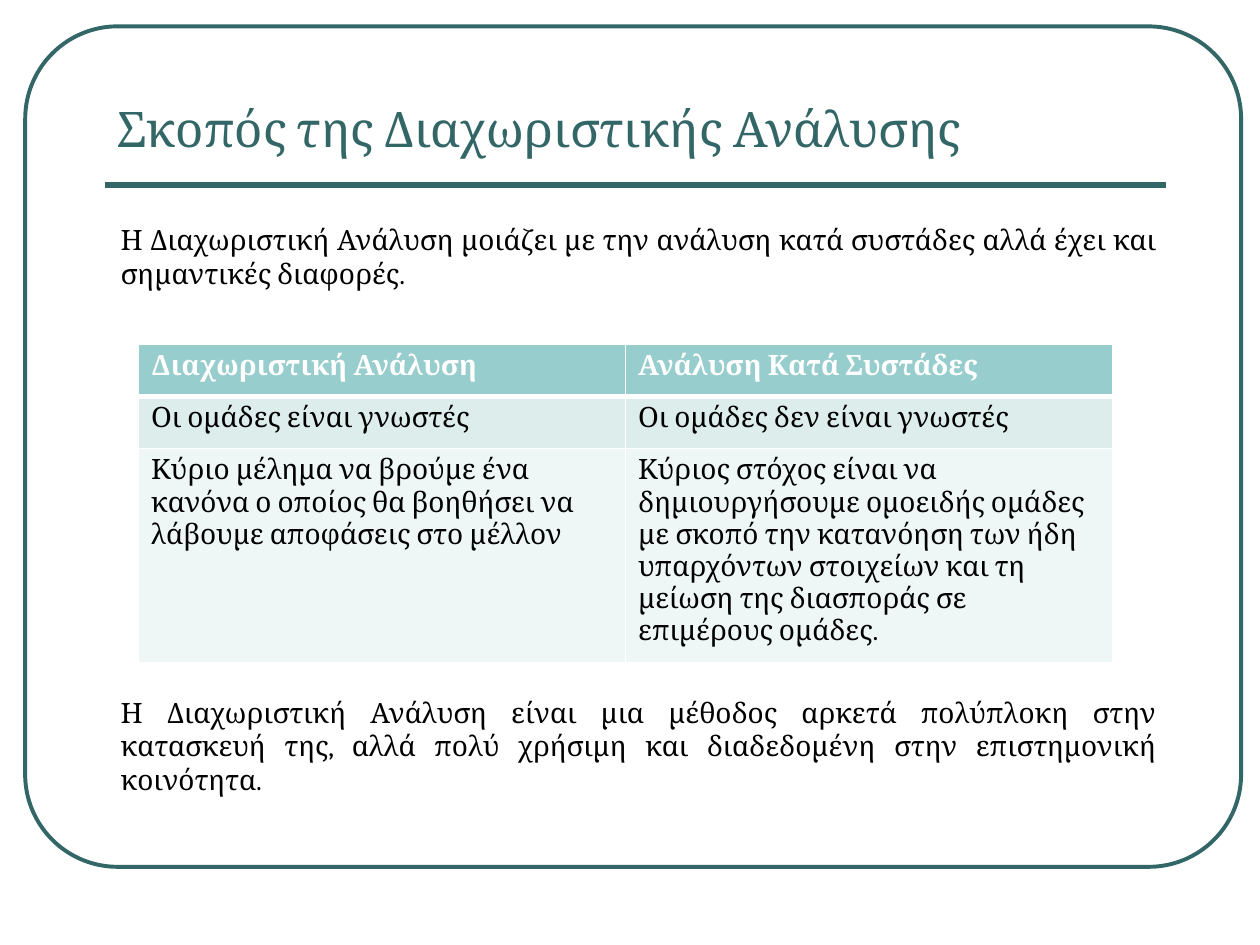
from lxml import etree
from pptx import Presentation, util as u
from pptx.dml.color import RGBColor
from pptx.enum import shapes, text
from pptx.oxml import ns

W, H = u.Inches(10), u.Inches(7.5)
FONT = "Cambria"
COLORS = {"teal": "336666", "ink": "000000", "white": "FFFFFF",
          "header": "97CDCC", "band": "DDEDEC", "pale": "EFF6F6"}
ROWS = [
    ("Διαχωριστική Ανάλυση", "Ανάλυση Κατά Συστάδες"),
    ("Οι ομάδες είναι γνωστές", "Οι ομάδες δεν είναι γνωστές"),
    ("Κύριο μέλημα να βρούμε ένα κανόνα ο οποίος θα βοηθήσει να λάβουμε "
     "αποφάσεις στο μέλλον",
     "Κύριος στόχος είναι να δημιουργήσουμε ομοειδής ομάδες με σκοπό την "
     "κατανόηση των ήδη υπαρχόντων στοιχείων και τη μείωση της διασποράς σε "
     "επιμέρους ομάδες."),
]
ROW_SHARES = (0.17, 0.17, 0.66)
INTRO = ("Η Διαχωριστική Ανάλυση μοιάζει με την ανάλυση κατά συστάδες αλλά "
         "έχει και σημαντικές διαφορές.")
CLOSING = ("Η Διαχωριστική Ανάλυση είναι μια μέθοδος αρκετά πολύπλοκη στην "
           "κατασκευή της, αλλά πολύ χρήσιμη και διαδεδομένη στην "
           "επιστημονική κοινότητα.")


def rgb(name):
    """Return the named colour."""
    return RGBColor.from_string(COLORS[name])


def box(left, top, width, height):
    """Turn inches on the slide into a left, top, width, height box."""
    return tuple(u.Inches(v) for v in (left, top, width, height))


def write(tf, content, size, color, bold=False, align=text.PP_ALIGN.LEFT):
    """Fill a text frame with one formatted paragraph."""
    tf.text = content
    p = tf.paragraphs[0]
    p.alignment = align
    font = p.runs[0].font
    font.name, font.size, font.bold = FONT, u.Pt(size), bold
    font.color.rgb = rgb(color)


def add_frame(s, area):
    """Draw the rounded outline around the slide."""
    sp = s.shapes.add_shape(shapes.MSO_SHAPE.ROUNDED_RECTANGLE, *area)
    sp.adjustments[0] = 0.11
    sp.shadow.inherit = False
    sp.fill.background()
    sp.line.color.rgb = rgb("teal")
    sp.line.width = u.Pt(2.25)


def add_title(s, area, content):
    """Place the title and the rule below it."""
    left, top, width, height = area
    title = s.shapes.title
    title.left, title.top, title.width, title.height = area
    tf = title.text_frame
    tf.auto_size = text.MSO_AUTO_SIZE.NONE
    tf.vertical_anchor = text.MSO_ANCHOR.BOTTOM
    write(tf, content, 28, "teal")
    y = top + int(height * 1.18)
    rule = s.shapes.add_connector(shapes.MSO_CONNECTOR.STRAIGHT,
                                  left, y, left + width, y)
    rule.line.color.rgb = rgb("teal")
    rule.line.width = u.Pt(3)
    etree.SubElement(rule._element.spPr, ns.qn("a:effectLst"))


def add_paragraph(s, area, content):
    """Place a justified paragraph."""
    tf = s.shapes.add_textbox(*area).text_frame
    tf.word_wrap = True
    write(tf, content, 16, "ink", align=text.PP_ALIGN.JUSTIFY)


def add_borders(cell, bottom):
    """Give a cell white borders, with its own bottom width in points."""
    tc_pr = cell._tc.get_or_add_tcPr()
    for i, (side, width) in enumerate(zip("LRTB", (1, 1, 1, bottom))):
        ln = etree.Element(ns.qn(f"a:ln{side}"), w=str(u.Pt(width)))
        fill = etree.SubElement(ln, ns.qn("a:solidFill"))
        etree.SubElement(fill, ns.qn("a:srgbClr"), val=COLORS["white"])
        tc_pr.insert(i, ln)


def add_comparison(s, area, rows):
    """Place the table that compares the two methods."""
    table = s.shapes.add_table(len(rows), len(rows[0]), *area).table
    for r, (row, share) in enumerate(zip(rows, ROW_SHARES)):
        table.rows[r].height = int(area[3] * share)
        head = r == 0
        for c, content in enumerate(row):
            cell = table.cell(r, c)
            write(cell.text_frame, content, 16,
                  "white" if head else "ink", bold=head)
            cell.fill.solid()
            cell.fill.fore_color.rgb = rgb(("header", "band", "pale")[r])
            add_borders(cell, 3 if head else 1)
    for c in range(len(rows[0]) if rows else 0):
        if len(rows) > 1:
            top_line = table.cell(1, c)._tc.tcPr.find(ns.qn("a:lnT"))
            top_line.set("w", str(u.Pt(3)))


def main():
    """Build the slide."""
    prs = Presentation()
    prs.slide_width, prs.slide_height = W, H
    s = prs.slides.add_slide(prs.slide_layouts[5])
    add_frame(s, box(0.2, 0.21, 9.65, 6.67))
    add_title(s, box(0.83, 0.36, 8.42, 0.94),
              "Σκοπός της Διαχωριστικής Ανάλυσης")
    add_paragraph(s, box(0.86, 1.72, 8.42, 0.63), INTRO)
    add_comparison(s, box(1.1, 2.73, 7.73, 2.44), ROWS)
    add_paragraph(s, box(0.86, 5.47, 8.42, 0.63), CLOSING)
    prs.save("out.pptx")


if __name__ == "__main__":
    main()
